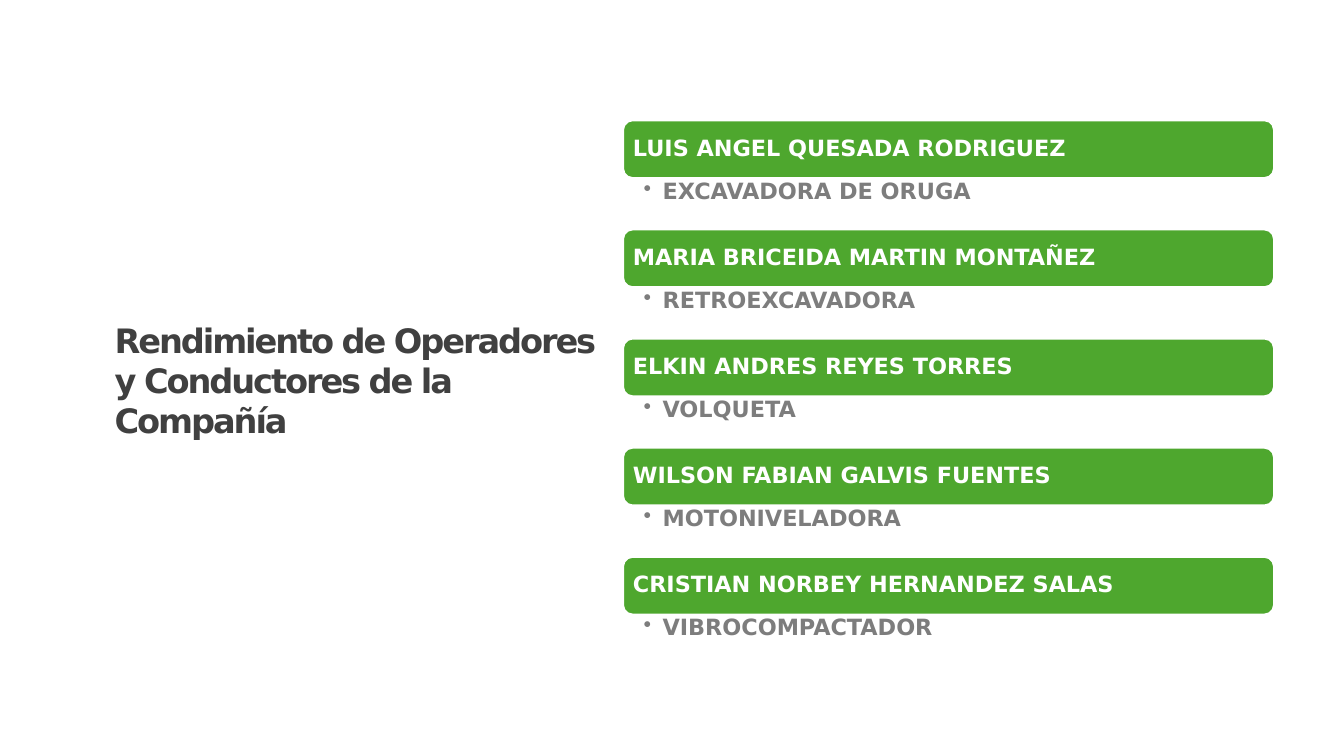
"""Build the slide that lists operators and the machine each one drives."""
from lxml.etree import SubElement
from pptx import Presentation
from pptx.dml.color import RGBColor
from pptx.enum.shapes import MSO_SHAPE
from pptx.enum.text import MSO_ANCHOR, MSO_AUTO_SIZE, PP_ALIGN
from pptx.oxml.ns import qn
from pptx.util import Cm, Pt


def color(hex_string):
    return RGBColor.from_string(hex_string)


def write(box, text, size=16, ink="FFFFFF", anchor=MSO_ANCHOR.MIDDLE,
          insets=(0.18, 0.18, 0.18, 0.18), line_spacing=0.9, tracking=0, bullet=None):
    frame = box.text_frame
    frame.word_wrap = True
    frame.auto_size = MSO_AUTO_SIZE.NONE
    frame.vertical_anchor = anchor
    frame.margin_left, frame.margin_top, frame.margin_right, frame.margin_bottom = map(Cm, insets)
    para = frame.paragraphs[0]
    para.alignment = PP_ALIGN.LEFT
    para.line_spacing = line_spacing
    if bullet:
        properties = para._p.get_or_add_pPr()
        properties.set("marL", str(Cm(0.48)))
        properties.set("indent", str(Cm(-0.48)))
        SubElement(properties, qn("a:buChar")).set("char", bullet)
    span = para.add_run()
    span.text = text
    span.font.name = "DejaVu Sans"
    span.font.size = Pt(size)
    span.font.bold = True
    span.font.color.rgb = color(ink)
    if tracking:
        span.font._element.set("spc", str(int(tracking * 100)))


operators = [
    ("LUIS ANGEL QUESADA RODRIGUEZ", "EXCAVADORA DE ORUGA"),
    ("MARIA BRICEIDA MARTIN MONTAÑEZ", "RETROEXCAVADORA"),
    ("ELKIN ANDRES REYES TORRES", "VOLQUETA"),
    ("WILSON FABIAN GALVIS FUENTES", "MOTONIVELADORA"),
    ("CRISTIAN NORBEY HERNANDEZ SALAS", "VIBROCOMPACTADOR"),
]
list_left, list_top, list_width = 15.7, 3.03, 16.41
bar_height, machine_height = 1.46, 1.29

deck = Presentation()
deck.slide_width, deck.slide_height = Cm(33.87), Cm(19.05)
page = deck.slides.add_slide(deck.slide_layouts[5])

title = page.shapes.title
title.left, title.top, title.width, title.height = Cm(2.64), Cm(7.85), Cm(13.03), Cm(4.11)
write(title, "Rendimiento de Operadores y Conductores de la Compañía", size=24, ink="404040",
      anchor=MSO_ANCHOR.TOP, insets=(0.25, 0.2, 0.25, 0.13), line_spacing=1.0, tracking=-1.5)

for index, (operator, machine) in enumerate(operators):
    top = list_top + index * (bar_height + machine_height)
    bar = page.shapes.add_shape(MSO_SHAPE.ROUNDED_RECTANGLE, Cm(list_left), Cm(top),
                                Cm(list_width), Cm(bar_height))
    bar.shadow.inherit = False
    bar.fill.solid()
    bar.fill.fore_color.rgb = color("4EA72E")
    bar.line.color.rgb = color("FFFFFF")
    bar.line.width = Pt(1.5)
    write(bar, operator)

    machine_box = page.shapes.add_textbox(Cm(list_left), Cm(top + bar_height),
                                          Cm(list_width), Cm(machine_height))
    write(machine_box, machine, ink="7D7D7D", anchor=MSO_ANCHOR.TOP,
          insets=(0.52, 0.05, 0.3, 0.05), bullet="•")

deck.save("out.pptx")
